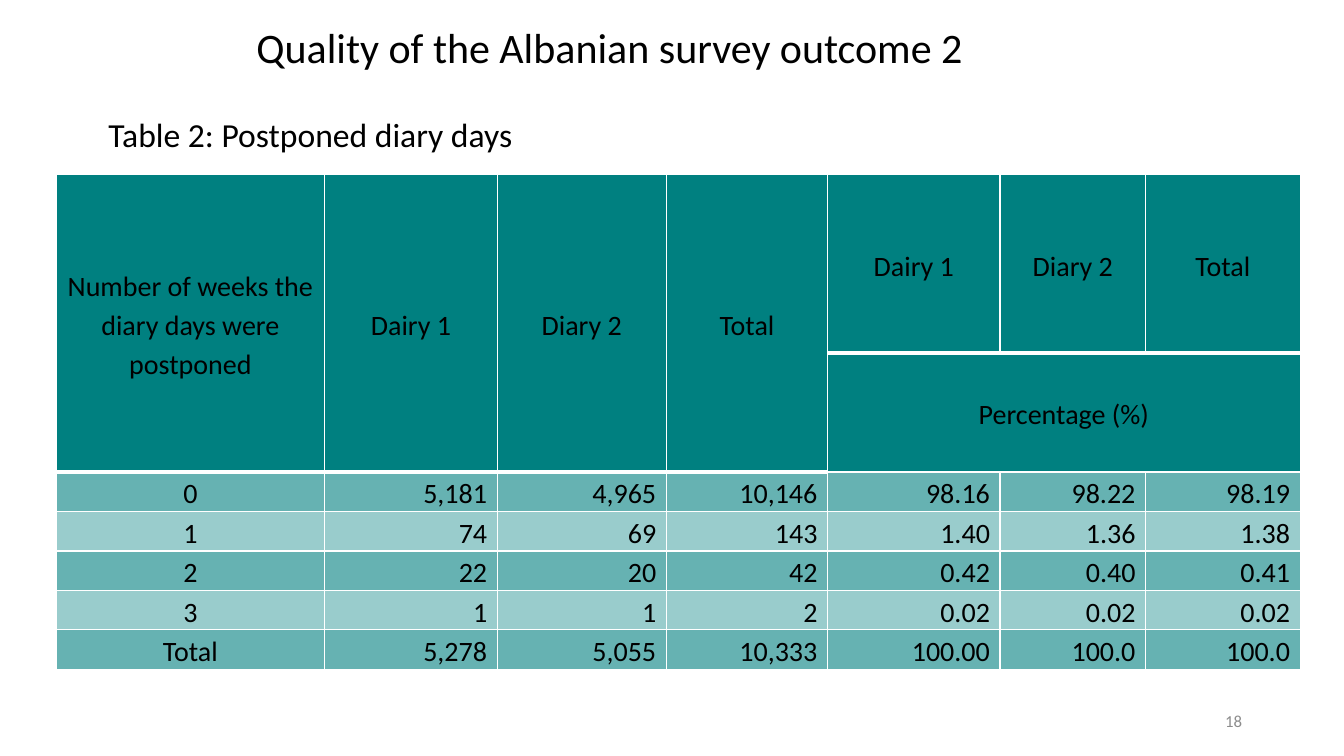
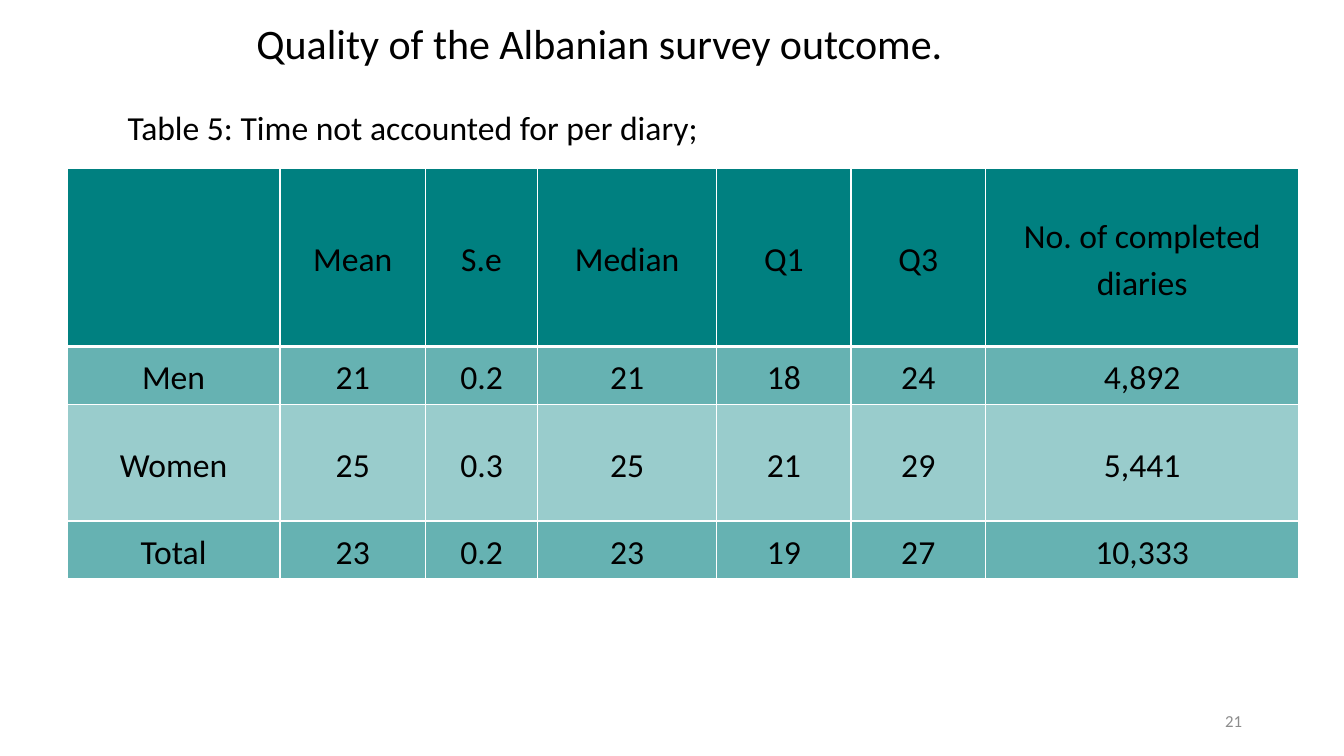
from dataclasses import dataclass

from lxml import etree
from pptx import Presentation
from pptx.dml.color import RGBColor
from pptx.enum.text import MSO_ANCHOR, MSO_AUTO_SIZE, PP_ALIGN
from pptx.oxml.ns import qn
from pptx.util import Inches, Pt

LEFT, CENTER, RIGHT = PP_ALIGN.LEFT, PP_ALIGN.CENTER, PP_ALIGN.RIGHT
TOP, MIDDLE = MSO_ANCHOR.TOP, MSO_ANCHOR.MIDDLE
FIXED, GROW = MSO_AUTO_SIZE.NONE, MSO_AUTO_SIZE.SHAPE_TO_FIT_TEXT
TITLE_ONLY = 5


@dataclass(frozen=True)
class Theme:
    font: str = "Calibri"
    ink: str = "000000"
    muted: str = "8C8C8C"
    teal: str = "008080"
    rule: str = "FFFFFF"
    band_opacity: tuple = (60, 40)
    title_size: int = 30
    caption_size: int = 24
    number_size: int = 12
    rule_width: int = 1
    header_rule_width: int = 3


theme = Theme()
deck = Presentation()
deck.slide_width, deck.slide_height = Inches(13.33), Inches(7.5)
COLUMN = deck.slide_width / 120
ROW = deck.slide_height / 90


def grid(left, top, width, height):
    return [round(left * COLUMN), round(top * ROW), round(width * COLUMN), round(height * ROW)]


def write(frame, text, size, color=theme.ink, align=LEFT, line_spacing=None, space_after=None):
    para = frame.paragraphs[0]
    para.alignment = align
    para.line_spacing = line_spacing
    if space_after is not None:
        para.space_after = Pt(space_after)
    para.font.size = Pt(size)
    if text:
        span = para.add_run()
        span.text = text
        span.font.name = theme.font
        span.font.size = Pt(size)
        span.font.bold = False
        span.font.color.rgb = RGBColor.from_string(color)


pages = [
    {
        "title": "Quality of the Albanian survey outcome 2",
        "title_grid": (22, 1.4, 96, 9),
        "caption": "Table 2: Postponed diary days",
        "caption_grid": (8.8, 13, 38.2, 6),
        "number": "18",
        "origin": (5, 20.8),
        "columns": [24, 15.4, 15.1, 14.4, 15.4, 13, 13.8],
        "rows": [21.24, 14.16] + [4.7] * 5,
        "header_rows": 2,
        "merges": [((0, column), (1, column)) for column in range(4)] + [((1, 4), (1, 6))],
        "size": 20,
        "value_align": RIGHT,
        "cells": [
            ["Number of weeks the diary days were postponed",
             "Dairy 1", "Diary 2", "Total", "Dairy 1", "Diary 2", "Total"],
            ["", "", "", "", "Percentage (%)", "", ""],
            ["0", "5,181", "4,965", "10,146", "98.16", "98.22", "98.19"],
            ["1", "74", "69", "143", "1.40", "1.36", "1.38"],
            ["2", "22", "20", "42", "0.42", "0.40", "0.41"],
            ["3", "1", "1", "2", "0.02", "0.02", "0.02"],
            ["Total", "5,278", "5,055", "10,333", "100.00", "100.0", "100.0"],
        ],
    },
    {
        "title": "Quality of the Albanian survey outcome.",
        "title_grid": (22, 1, 98, 9),
        "caption": "Table 5: Time not accounted for per diary;",
        "caption_grid": (10.5, 12.1, 53.2, 6),
        "number": "21",
        "origin": (6, 20),
        "columns": [19, 13, 10, 16, 12, 12, 28],
        "rows": [21.24, 6.9, 13.9, 6.9],
        "header_rows": 1,
        "merges": [],
        "size": 24,
        "value_align": CENTER,
        "cells": [
            ["", "Mean", "S.e", "Median", "Q1", "Q3", "No. of completed diaries"],
            ["Men", "21", "0.2", "21", "18", "24", "4,892"],
            ["Women", "25", "0.3", "25", "21", "29", "5,441"],
            ["Total", "23", "0.2", "23", "19", "27", "10,333"],
        ],
    },
]

for content in pages:
    page = deck.slides.add_slide(deck.slide_layouts[TITLE_ONLY])

    table = page.shapes.add_table(
        len(content["rows"]), len(content["columns"]),
        *grid(*content["origin"], sum(content["columns"]), sum(content["rows"])),
    ).table
    table.first_row = table.horz_banding = False
    for column, width in zip(table.columns, content["columns"]):
        column.width = round(width * COLUMN)
    for row, height in zip(table.rows, content["rows"]):
        row.height = round(height * ROW)

    for row_index, texts in enumerate(content["cells"]):
        band = row_index - content["header_rows"]
        for column_index, text in enumerate(texts):
            cell = table.cell(row_index, column_index)
            cell.vertical_anchor = MIDDLE
            cell.margin_left = cell.margin_right = Inches(0.1)
            cell.margin_top = cell.margin_bottom = 0
            properties = cell._tc.get_or_add_tcPr()
            for side in ("lnL", "lnR", "lnT", "lnB"):
                thick = side == "lnB" and row_index == 0
                width = theme.header_rule_width if thick else theme.rule_width
                line = etree.SubElement(properties, qn(f"a:{side}"), w=str(Pt(width)))
                paint = etree.SubElement(line, qn("a:solidFill"))
                etree.SubElement(paint, qn("a:srgbClr"), val=theme.rule)
            cell.fill.solid()
            cell.fill.fore_color.rgb = RGBColor.from_string(theme.teal)
            if band >= 0:
                shade = properties.find(qn("a:solidFill")).find(qn("a:srgbClr"))
                opacity = theme.band_opacity[band % 2]
                etree.SubElement(shade, qn("a:alpha"), val=str(opacity * 1000))
            is_value = band >= 0 and column_index > 0
            write(cell.text_frame, text, content["size"], line_spacing=1.15, space_after=10,
                  align=content["value_align"] if is_value else CENTER)

    for first, last in content["merges"]:
        table.cell(*first).merge(table.cell(*last))

    title = page.shapes.title
    title.left, title.top, title.width, title.height = grid(*content["title_grid"])
    title.text_frame.auto_size = FIXED
    title.text_frame.vertical_anchor = MIDDLE
    write(title.text_frame, content["title"], theme.title_size, line_spacing=0.9)

    caption = page.shapes.add_textbox(*grid(*content["caption_grid"])).text_frame
    caption.word_wrap = False
    caption.auto_size = GROW
    caption.vertical_anchor = TOP
    write(caption, content["caption"], theme.caption_size)

    number = page.shapes.add_textbox(*grid(84.8, 83.4, 27, 4.8)).text_frame
    number.word_wrap = True
    number.vertical_anchor = MIDDLE
    write(number, content["number"], theme.number_size, color=theme.muted, align=RIGHT)

deck.save("out.pptx")
